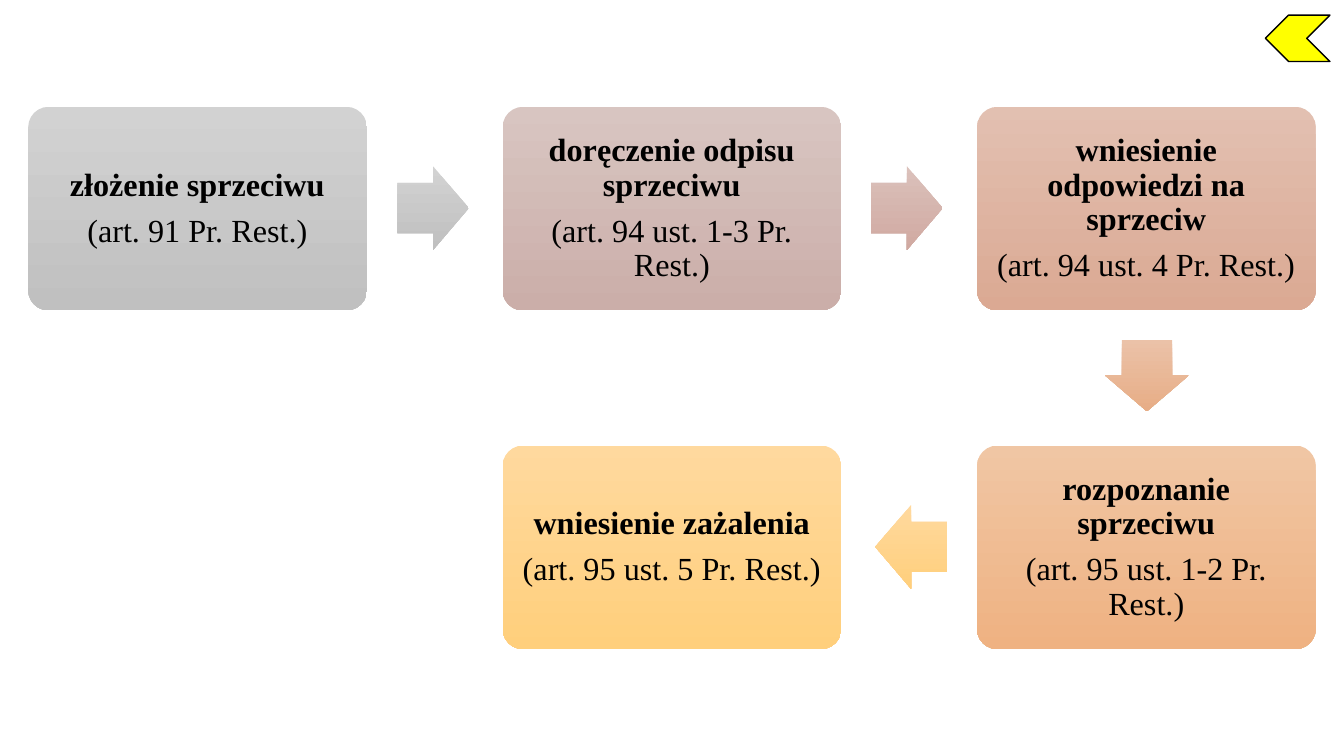
from pptx import Presentation
from pptx.dml.color import RGBColor
from pptx.enum.shapes import MSO_SHAPE as SHAPE
from pptx.enum.text import MSO_ANCHOR as ANCHOR, PP_ALIGN as ALIGN
from pptx.oxml.ns import qn
from pptx.util import Inches, Pt

BLACK = RGBColor(0x00, 0x00, 0x00)
YELLOW = RGBColor(0xFF, 0xFF, 0x00)

# Gradients, top and bottom colour
GREY = RGBColor(0xD2, 0xD2, 0xD2), RGBColor(0xC0, 0xC0, 0xC0)
MAUVE = RGBColor(0xD8, 0xC5, 0xC1), RGBColor(0xCB, 0xAE, 0xA9)
ROSE = RGBColor(0xDB, 0xC1, 0xBB), RGBColor(0xD0, 0xA9, 0xA1)
SALMON = RGBColor(0xE2, 0xC0, 0xB1), RGBColor(0xDB, 0xA9, 0x93)
PEACH = RGBColor(0xEB, 0xC2, 0xA8), RGBColor(0xE7, 0xAD, 0x86)
ORANGE = RGBColor(0xF0, 0xC6, 0xA4), RGBColor(0xEF, 0xB2, 0x82)
AMBER = RGBColor(0xFF, 0xD9, 0x9E), RGBColor(0xFF, 0xCF, 0x7C)

FONT = "Times New Roman"
LEFT, TOP = 0.28, 1.06
STEP_W, STEP_H = 3.36, 2.02
COLUMN_PITCH, ROW_PITCH = 4.705, 3.36
ARROW_W, ARROW_H = 0.71, 0.83

# Column, row, stage, legal basis, gradient
STEPS = [
    (0, 0, "złożenie sprzeciwu", "(art. 91 Pr. Rest.)", GREY),
    (1, 0, "doręczenie odpisu sprzeciwu", "(art. 94 ust. 1-3 Pr. Rest.)", MAUVE),
    (2, 0, "wniesienie odpowiedzi na sprzeciw", "(art. 94 ust. 4 Pr. Rest.)", SALMON),
    (2, 1, "rozpoznanie sprzeciwu", "(art. 95 ust. 1-2 Pr. Rest.)", ORANGE),
    (1, 1, "wniesienie zażalenia", "(art. 95 ust. 5 Pr. Rest.)", AMBER),
]

# Left, top, rotation, gradient
ARROWS = [
    (3.94, 1.65, 0, GREY),
    (8.64, 1.65, 0, ROSE),
    (11.02, 3.31, 90, PEACH),
    (8.68, 5.01, 180, AMBER),
]


def add_gradient_shape(slide, kind, left, top, width, height, gradient):
    shape = slide.shapes.add_shape(
        kind, Inches(left), Inches(top), Inches(width), Inches(height))
    shape.shadow.inherit = False
    shape.line.fill.background()
    shape.fill.gradient()
    shape.fill.gradient_angle = 270
    for stop, position, color in zip(shape.fill.gradient_stops, (0, 1), gradient):
        stop.position = position
        stop.color.rgb = color
    # Keep the gradient vertical when the shape is turned
    shape._element.spPr.find(qn("a:gradFill")).set("rotWithShape", "0")
    return shape


def add_step(slide, column, row, stage, basis, gradient):
    step = add_gradient_shape(
        slide, SHAPE.ROUNDED_RECTANGLE, LEFT + column * COLUMN_PITCH,
        TOP + row * ROW_PITCH, STEP_W, STEP_H, gradient)
    step.adjustments[0] = 0.1
    frame = step.text_frame
    frame.word_wrap = True
    frame.vertical_anchor = ANCHOR.MIDDLE
    # The rounded corners already inset the text a little
    frame.margin_left = frame.margin_right = Inches(0.14)
    frame.margin_top = frame.margin_bottom = Inches(0.14)
    frame.text = f"{stage}\n{basis}"
    for paragraph, bold in zip(frame.paragraphs, (True, False)):
        paragraph.alignment = ALIGN.CENTER
        paragraph.line_spacing = 0.9
        paragraph.space_after = Pt(8)
        font = paragraph.runs[0].font
        font.name = FONT
        font.size = Pt(23)
        font.bold = bold
        font.color.rgb = BLACK


def add_arrow(slide, left, top, rotation, gradient):
    arrow = add_gradient_shape(
        slide, SHAPE.RIGHT_ARROW, left, top, ARROW_W, ARROW_H, gradient)
    arrow.adjustments[0] = 0.6
    arrow.adjustments[1] = 0.5
    arrow.rotation = rotation


def add_back_marker(slide):
    marker = slide.shapes.add_shape(
        SHAPE.CHEVRON, Inches(12.55), Inches(0.15), Inches(0.64), Inches(0.46))
    marker.rotation = 180
    marker.shadow.inherit = False
    marker.fill.solid()
    marker.fill.fore_color.rgb = YELLOW
    marker.line.color.rgb = BLACK
    marker.line.width = Pt(1)


def main():
    deck = Presentation()
    deck.slide_width, deck.slide_height = Inches(13.33), Inches(7.5)
    slide = deck.slides.add_slide(deck.slide_layouts[6])

    # Stages of the procedure
    for step in STEPS:
        add_step(slide, *step)

    # Order of the stages
    for arrow in ARROWS:
        add_arrow(slide, *arrow)

    add_back_marker(slide)
    deck.save("out.pptx")


if __name__ == "__main__":
    main()
